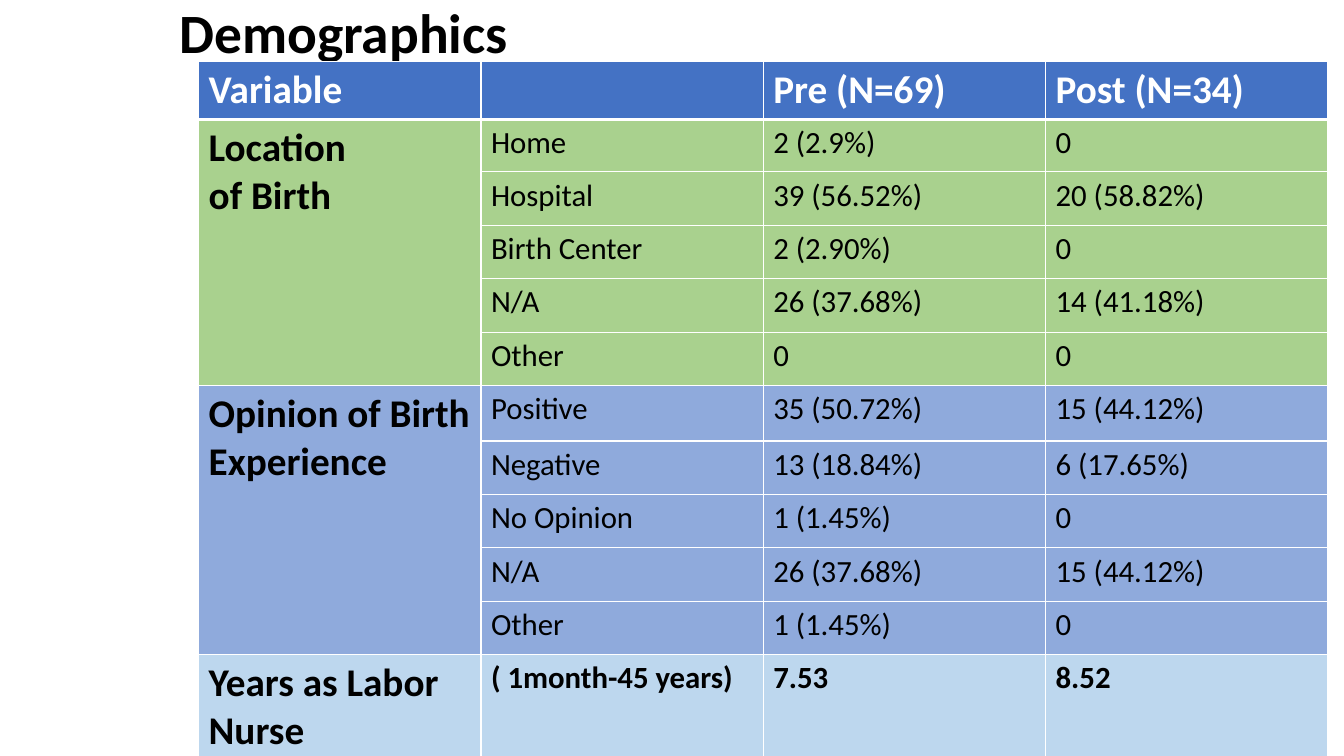
from lxml import etree
from pptx import Presentation
from pptx.dml.color import RGBColor
from pptx.enum.text import MSO_ANCHOR, MSO_AUTO_SIZE, PP_ALIGN
from pptx.oxml.ns import qn
from pptx.util import Pt

LEFT, MIDDLE, NO_FIT = PP_ALIGN.LEFT, MSO_ANCHOR.MIDDLE, MSO_AUTO_SIZE.NONE
PX = 9144  # 100 px to the inch
FONT = "Calibri"
BLACK, WHITE = "000000", "FFFFFF"
HEADER_BLUE = "4472C4"
HEADINGS = ["Variable", "", "Pre (N=69)", "Post (N=34)"]
GROUPS = [
    ("Location\nof Birth", "A9D18E", False, [
        ("Home", "2 (2.9%)", "0"),
        ("Hospital", "39 (56.52%)", "20 (58.82%)"),
        ("Birth Center", "2 (2.90%)", "0"),
        ("N/A", "26 (37.68%)", "14 (41.18%)"),
        ("Other", "0", "0"),
    ]),
    ("Opinion of Birth Experience", "8FAADC", False, [
        ("Positive", "35 (50.72%)", "15 (44.12%)"),
        ("Negative", "13 (18.84%)", "6 (17.65%)"),
        ("No Opinion", "1 (1.45%)", "0"),
        ("N/A", "26 (37.68%)", "15 (44.12%)"),
        ("Other", "1 (1.45%)", "0"),
    ]),
    ("Years as Labor Nurse", "BDD7EE", True, [
        ("( 1month-45 years)", "7.53", "8.52"),
    ]),
]
ROW_HEIGHT = 53
SPECIAL_HEIGHTS = {1: 52, 6: 55}


def rgb(value):
    return RGBColor.from_string(value)


def style_font(font, size, color, bold):
    font.name, font.size, font.bold = FONT, Pt(size), bold
    font.color.rgb = rgb(color)


def add_borders(cell, top=1, bottom=1):
    """Draw white cell borders; widths are in points."""
    properties = cell._tc.get_or_add_tcPr()
    for side, width in (("L", 1), ("R", 1), ("T", top), ("B", bottom)):
        line = etree.SubElement(properties, qn(f"a:ln{side}"), w=str(Pt(width)))
        fill = etree.SubElement(line, qn("a:solidFill"))
        etree.SubElement(fill, qn("a:srgbClr"), val=WHITE)


def fill_cell(cell, text, fill, size, color, bold):
    cell.fill.solid()
    cell.fill.fore_color.rgb = rgb(fill)
    cell.text_frame.text = text
    for paragraph in cell.text_frame.paragraphs:
        style_font(paragraph.font, size, color, bold)
        for run in paragraph.runs:
            style_font(run.font, size, color, bold)


def add_title(slide, left, top, width, height):
    title = slide.shapes.title
    title.left, title.top = left * PX, top * PX
    title.width, title.height = width * PX, height * PX
    frame = title.text_frame
    frame.text = "Demographics"
    frame.auto_size, frame.vertical_anchor = NO_FIT, MIDDLE
    heading = frame.paragraphs[0]
    heading.alignment, heading.line_spacing = LEFT, 0.9
    style_font(heading.runs[0].font, 39.6, BLACK, True)


def add_demographics(slide, left, top, width):
    row_count = 1 + sum(len(rows) for *_, rows in GROUPS)
    heights = [SPECIAL_HEIGHTS.get(i, ROW_HEIGHT) for i in range(row_count)]
    table = slide.shapes.add_table(
        row_count, len(HEADINGS), left * PX, top * PX,
        width * PX, sum(heights) * PX).table
    for row, height in zip(table.rows, heights):
        row.height = height * PX
    for r in range(row_count):
        for c in range(len(HEADINGS)):
            add_borders(table.cell(r, c), top=3 if r == 1 else 1,
                        bottom=3 if r == 0 else 1)

    for c, heading in enumerate(HEADINGS):
        fill_cell(table.cell(0, c), heading, HEADER_BLUE, 28, WHITE, True)
    first = 1
    for variable, fill, bold, rows in GROUPS:
        last = first + len(rows) - 1
        if last > first:
            table.cell(first, 0).merge(table.cell(last, 0))
        fill_cell(table.cell(first, 0), variable, fill, 28, BLACK, True)
        for r, values in enumerate(rows, first):
            for c, value in enumerate(values, 1):
                fill_cell(table.cell(r, c), value, fill, 22, BLACK, bold)
        first = last + 1


def main():
    deck = Presentation()
    deck.slide_width, deck.slide_height = 1333 * PX, 750 * PX
    slide = deck.slides.add_slide(deck.slide_layouts[5])
    add_title(slide, 168, 0, 1071, 70)
    add_demographics(slide, 197, 61, 1120)
    deck.save("out.pptx")


if __name__ == "__main__":
    main()
